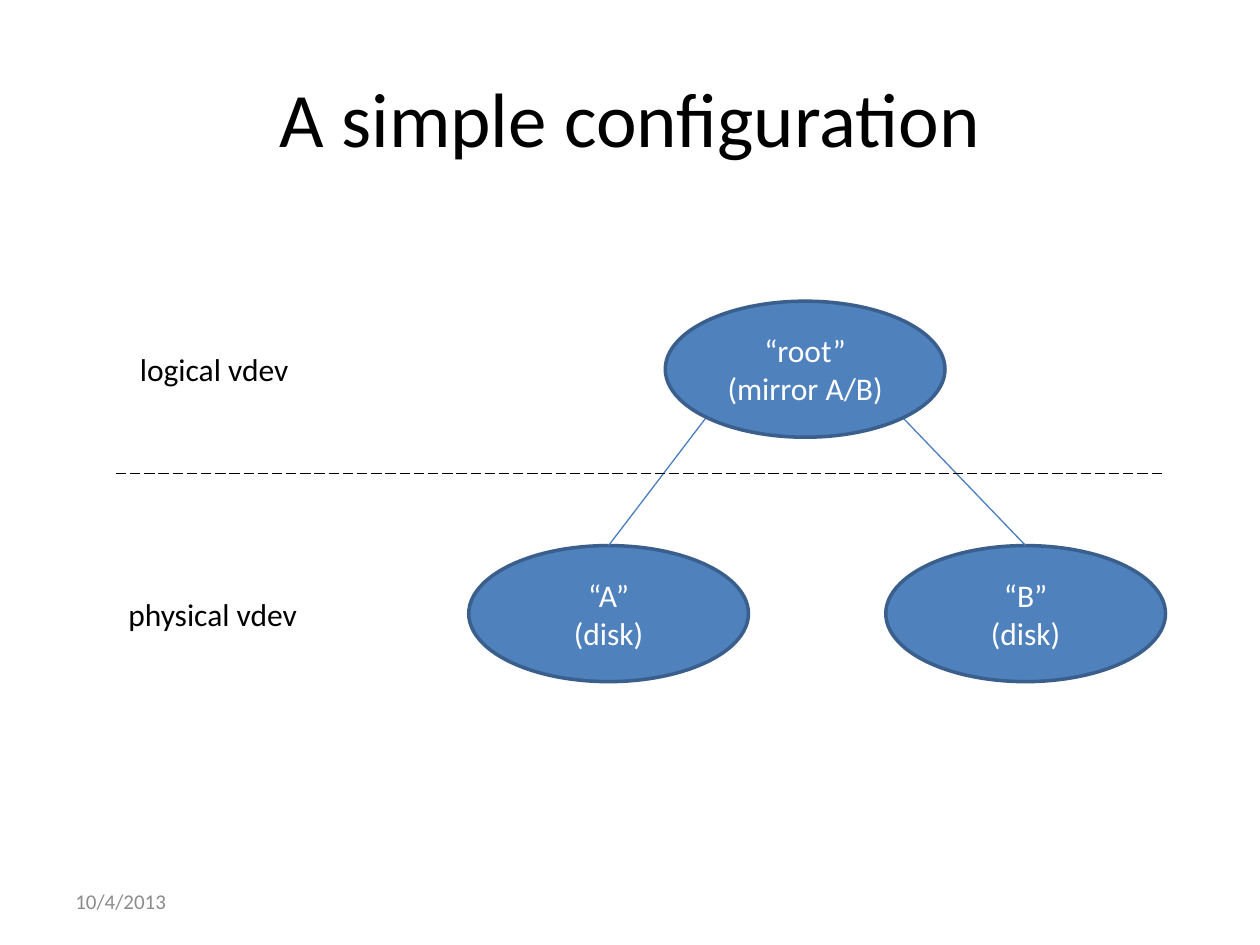
from lxml import etree
from pptx import Presentation
from pptx.dml.color import RGBColor
from pptx.enum.dml import MSO_LINE
from pptx.enum.shapes import MSO_CONNECTOR, MSO_SHAPE
from pptx.enum.text import MSO_ANCHOR, MSO_AUTO_SIZE, PP_ALIGN
from pptx.oxml.ns import qn
from pptx.util import Inches, Pt

CENTER, LEFT = PP_ALIGN.CENTER, PP_ALIGN.LEFT
MIDDLE, TOP = MSO_ANCHOR.MIDDLE, MSO_ANCHOR.TOP
FIT_SHAPE, NO_FIT = MSO_AUTO_SIZE.SHAPE_TO_FIT_TEXT, MSO_AUTO_SIZE.NONE
OVAL, STRAIGHT = MSO_SHAPE.OVAL, MSO_CONNECTOR.STRAIGHT
LONG_DASH = MSO_LINE.LONG_DASH

FONT = "Calibri"
BLACK, WHITE, GRAY = "000000", "FFFFFF", "8C8C8C"
BLUE, OUTLINE, LINK = "4F81BD", "3A5F8C", "4B7EBC"
NODE_W, NODE_H = 2.22, 1.08
LOGICAL_Y, PHYSICAL_Y, DIVIDER_Y = 2.39, 4.33, 3.76
LABEL_OFFSET = 0.34


def rgb(value):
    return RGBColor.from_string(value)


def write(tf, lines, size, color, align=CENTER, anchor=MIDDLE):
    tf.vertical_anchor = anchor
    for i, line in enumerate(lines):
        p = tf.paragraphs[0] if i == 0 else tf.add_paragraph()
        p.alignment = align
        r = p.add_run()
        r.text = line
        r.font.name = FONT
        r.font.size = Pt(size)
        r.font.color.rgb = rgb(color)


def add_title(s, text):
    sp = s.shapes.title
    sp.left, sp.top = Inches(0.5), Inches(0.3)
    sp.width, sp.height = Inches(9), Inches(1.25)
    write(sp.text_frame, [text], 44, BLACK)


def add_text(s, text, x, y, w, size, color, align, anchor, wrap):
    sp = s.shapes.add_textbox(Inches(x), Inches(y), Inches(w), Inches(0.4))
    tf = sp.text_frame
    tf.word_wrap = wrap
    tf.auto_size = NO_FIT if wrap else FIT_SHAPE
    write(tf, [text], size, color, align, anchor)


def add_node(s, lines, x, y):
    sp = s.shapes.add_shape(OVAL, Inches(x), Inches(y), Inches(NODE_W), Inches(NODE_H))
    sp.shadow.inherit = False
    sp.fill.solid()
    sp.fill.fore_color.rgb = rgb(BLUE)
    sp.line.color.rgb = rgb(OUTLINE)
    sp.line.width = Pt(2)
    write(sp.text_frame, lines, 18, WHITE)
    return sp


def add_line(s, x1, y1, x2, y2, color):
    cxn = s.shapes.add_connector(STRAIGHT, Inches(x1), Inches(y1), Inches(x2), Inches(y2))
    cxn.line.color.rgb = rgb(color)
    cxn.line.width = Pt(0.75)
    etree.SubElement(cxn._element.spPr, qn("a:effectLst"))
    return cxn


def add_disk(s, name, x, link_x):
    disk = add_node(s, [f"“{name}”", "(disk)"], x, PHYSICAL_Y)
    link = add_line(s, link_x, 3.32, x + NODE_W / 2, PHYSICAL_Y, LINK)
    link.end_connect(disk, 0)


def main():
    prs = Presentation()
    prs.slide_width, prs.slide_height = Inches(10), Inches(7.5)
    s = prs.slides.add_slide(prs.slide_layouts[5])

    add_title(s, "A simple configuration")
    add_text(s, "10/4/2013", 0.5, 6.95, 2.33, 12, GRAY, LEFT, MIDDLE, True)
    add_disk(s, "A", 3.72, 5.6)
    add_disk(s, "B", 7.03, 7.17)
    add_node(s, ["“root”", "(mirror A/B)"], 5.28, LOGICAL_Y)
    add_text(s, "logical vdev", 1, LOGICAL_Y + LABEL_OFFSET, 1.4, 18, BLACK, CENTER, TOP, False)
    add_text(s, "physical vdev", 0.92, PHYSICAL_Y + LABEL_OFFSET, 1.56, 18, BLACK, LEFT, TOP, False)
    divider = add_line(s, 0.92, DIVIDER_Y, 9.25, DIVIDER_Y, BLACK)
    divider.line.dash_style = LONG_DASH

    prs.save("out.pptx")


if __name__ == "__main__":
    main()
